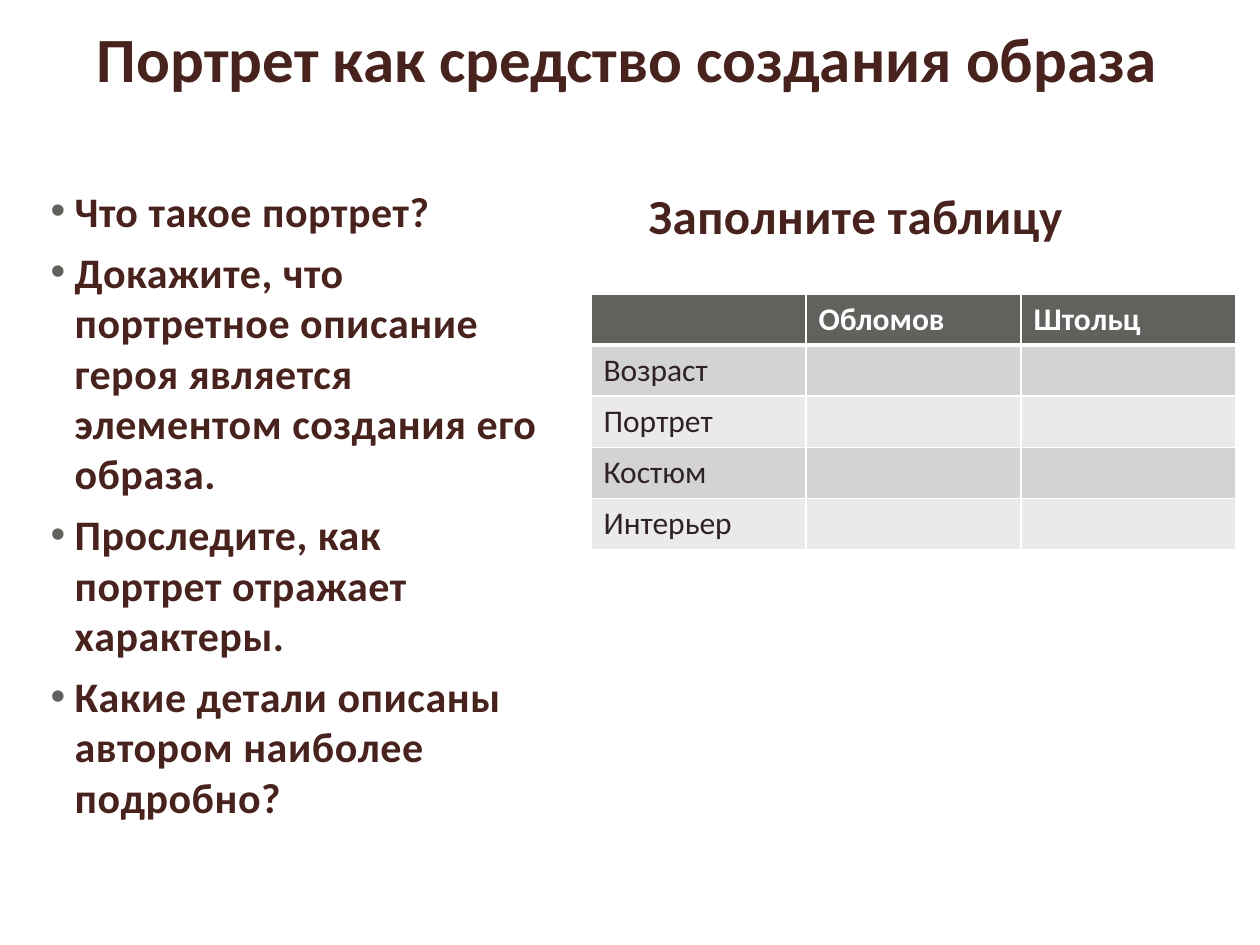
from lxml import etree
from pptx import Presentation
from pptx.dml.color import RGBColor
from pptx.enum.text import MSO_ANCHOR, MSO_AUTO_SIZE, PP_ALIGN
from pptx.oxml.ns import qn
from pptx.util import Emu, Pt

PX_PER_INCH = 126
FONT = "Calibri"
BROWN = RGBColor(0x48, 0x23, 0x1E)
GREY = RGBColor(0x61, 0x62, 0x5E)
INK = RGBColor(0x2E, 0x22, 0x24)
WHITE = RGBColor(0xFF, 0xFF, 0xFF)
BAND_DARK = RGBColor(0xD2, 0xD3, 0xD2)
BAND_LIGHT = RGBColor(0xEA, 0xEA, 0xEA)
TOP, BOTTOM = MSO_ANCHOR.TOP, MSO_ANCHOR.BOTTOM
CENTER = PP_ALIGN.CENTER
NO_AUTOFIT = MSO_AUTO_SIZE.NONE

HEADING = "Портрет как средство создания образа"
QUESTIONS = [
    "Что такое портрет?",
    "Докажите, что портретное описание героя является элементом создания его образа.",
    "Проследите, как портрет отражает характеры.",
    "Какие детали описаны автором наиболее подробно?",
]
TASK = "Заполните таблицу"
HEROES = ["", "Обломов", "Штольц"]
TRAITS = ["Возраст", "Портрет", "Костюм", "Интерьер"]


def px(length):
    """Turn a length in px into EMU."""
    return Emu(round(length * 914400 / PX_PER_INCH))


def format_runs(paragraph, size, color, bold=True, spacing=0):
    """Format every run of a paragraph."""
    for run in paragraph.runs:
        run.font.name = FONT
        run.font.size = Pt(size)
        run.font.bold = bold
        run.font.color.rgb = color
        if spacing:
            run._r.get_or_add_rPr().set("spc", str(spacing))


def place(placeholder, left, top, width, height, anchor):
    """Move a placeholder and return its text frame."""
    placeholder.left, placeholder.top = px(left), px(top)
    placeholder.width, placeholder.height = px(width), px(height)
    frame = placeholder.text_frame
    frame.word_wrap = True
    frame.auto_size = NO_AUTOFIT
    frame.vertical_anchor = anchor
    return frame


def set_bullet(paragraph, indent, char=None):
    """Give a paragraph a hanging bullet, or none."""
    properties = paragraph._p.get_or_add_pPr()
    properties.set("marL", str(px(indent)))
    properties.set("indent", str(-px(indent)))
    if char is None:
        etree.SubElement(properties, qn("a:buNone"))
        return
    color = etree.SubElement(properties, qn("a:buClr"))
    etree.SubElement(color, qn("a:srgbClr"), val=str(GREY))
    etree.SubElement(properties, qn("a:buFont"), typeface="Arial")
    etree.SubElement(properties, qn("a:buChar"), char=char)


def fill_title(title):
    """Write the slide heading."""
    frame = place(title, 35, 26, 1184, 147, BOTTOM)
    frame.margin_top, frame.margin_bottom = 0, px(78)
    frame.text = HEADING
    heading = frame.paragraphs[0]
    heading.alignment = CENTER
    format_runs(heading, 36, BROWN)


def fill_body(body, left, width, lines, size, indent=0, bullet=None):
    """Write a column of paragraphs into a body placeholder."""
    frame = place(body, left, 179, width, 680, TOP)
    frame.text = "\n".join(lines)
    for paragraph in frame.paragraphs:
        paragraph.space_before = Pt(6)
        set_bullet(paragraph, indent, bullet)
        format_runs(paragraph, size, BROWN, spacing=30)


def style_cell(cell, text, fill, color, header):
    """Write a table cell with its fill and white borders."""
    cell.text = text
    format_runs(cell.text_frame.paragraphs[0], 18, color, bold=header)
    properties = cell._tc.get_or_add_tcPr()
    for side in "LRTB":
        width = Pt(3 if header and side == "B" else 1)
        line = etree.SubElement(properties, qn(f"a:ln{side}"), w=str(width))
        solid = etree.SubElement(line, qn("a:solidFill"))
        etree.SubElement(solid, qn("a:srgbClr"), val=str(WHITE))
    cell.fill.solid()
    cell.fill.fore_color.rgb = fill


def add_comparison(slide, left, top, column_width, row_height):
    """Add the table that compares the two heroes."""
    rows = [HEROES] + [[trait, "", ""] for trait in TRAITS]
    count, columns = len(rows), len(HEROES)
    table = slide.shapes.add_table(
        count, columns, px(left), px(top),
        px(columns * column_width), px(count * row_height),
    ).table
    for row_index, texts in enumerate(rows):
        header = row_index == 0
        band = BAND_DARK if row_index % 2 else BAND_LIGHT
        fill, color = (GREY, WHITE) if header else (band, INK)
        for column_index, text in enumerate(texts):
            style_cell(table.cell(row_index, column_index), text, fill, color, header)


def main():
    """Build and save the slide."""
    presentation = Presentation()
    presentation.slide_width, presentation.slide_height = px(1260), px(945)
    slide = presentation.slides.add_slide(presentation.slide_layouts[3])
    title, questions, task = slide.placeholders
    fill_title(title)
    fill_body(questions, 38, 513, QUESTIONS, 24, indent=24, bullet="•")
    fill_body(task, 636, 586, [TASK], 28)
    add_comparison(slide, 591, 294, 215, 51)
    presentation.save("out.pptx")


if __name__ == "__main__":
    main()
